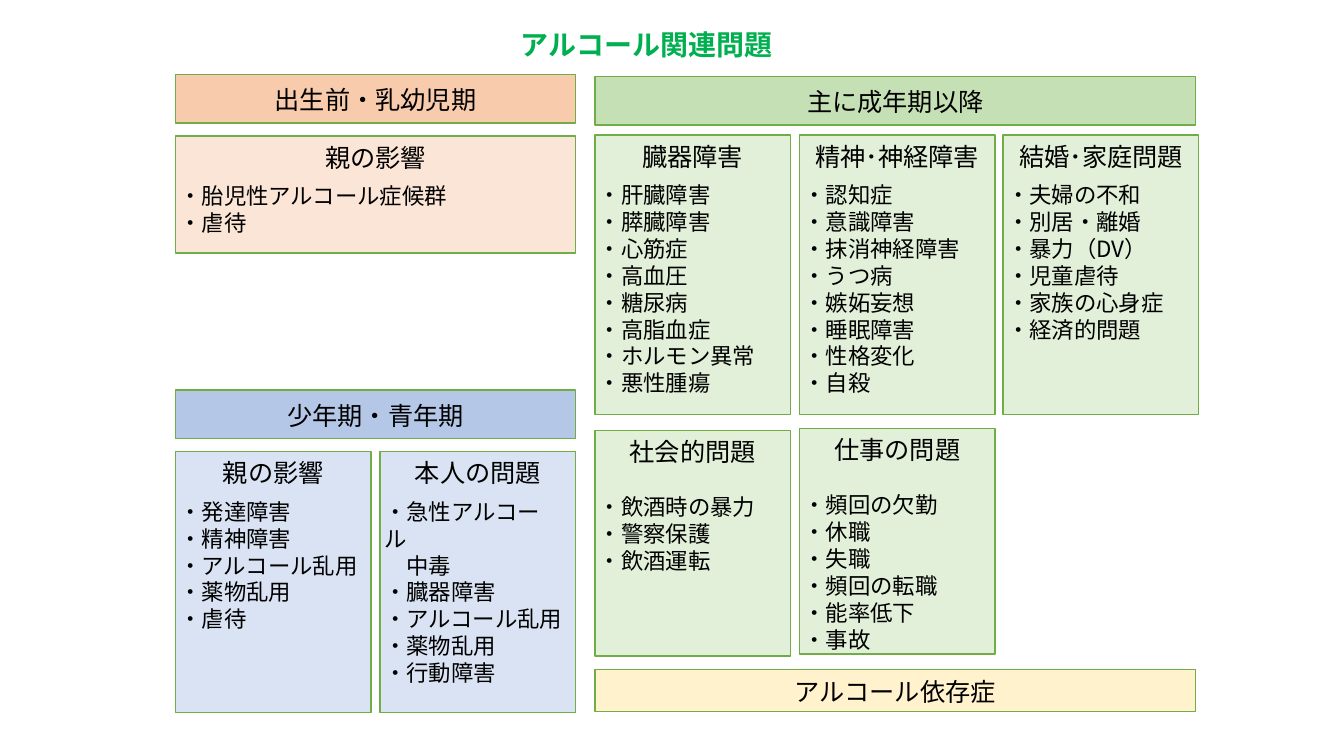
from lxml.etree import SubElement
from pptx import Presentation
from pptx.dml.color import RGBColor
from pptx.enum.lang import MSO_LANGUAGE_ID as Language
from pptx.enum.shapes import MSO_SHAPE as Shape
from pptx.enum.text import MSO_ANCHOR as Anchor, MSO_AUTO_SIZE as AutoSize, PP_ALIGN as Align
from pptx.oxml.ns import qn
from pptx.util import Inches, Pt

COLORS = {
    "text": "000000", "title": "00B050", "border": "70AD47",
    "infancy": "F8CBAD", "infancy_light": "FBE5D6",
    "youth": "B4C7E7", "youth_light": "DAE3F3",
    "adult": "C5E0B4", "adult_light": "E2F0D9",
    "dependence": "FFF2CC",
}
FONT = "Noto Sans CJK JP"
TITLE_SIZE, HEADING_SIZE, ITEM_SIZE = 20, 18, 16
LINE_RATIO = 1.2
NARROW_GAP, WIDE_GAP = 7.2, 19.2

LEFT, YOUTH_SECOND = 1.74, 3.77
ADULT_COLUMNS = (5.9, 7.93, 9.95)
LEFT_WIDTH, RIGHT_WIDTH = 3.97, 5.96
YOUTH_WIDTH, ADULT_WIDTH = 1.94, 1.94
BANNER_HEIGHT = 0.48

BANNERS = [
    ("出生前・乳幼児期", LEFT, 0.74, LEFT_WIDTH, BANNER_HEIGHT, "infancy"),
    ("主に成年期以降", ADULT_COLUMNS[0], 0.76, RIGHT_WIDTH, BANNER_HEIGHT, "adult"),
    ("少年期・青年期", LEFT, 3.87, LEFT_WIDTH, BANNER_HEIGHT, "youth"),
    ("アルコール依存症", ADULT_COLUMNS[0], 6.64, RIGHT_WIDTH, 0.42, "dependence"),
]
LEFT_CARDS = [
    ("親の影響", ["胎児性アルコール症候群", "虐待"],
     LEFT, 1.35, LEFT_WIDTH, 1.16, "infancy_light"),
    ("親の影響", ["発達障害", "精神障害", "アルコール乱用", "薬物乱用", "虐待"],
     LEFT, 4.48, YOUTH_WIDTH, 2.59, "youth_light"),
    ("本人の問題", ["急性アルコール　", "　中毒", "臓器障害", "アルコール乱用",
                "薬物乱用", "行動障害"],
     YOUTH_SECOND, 4.48, YOUTH_WIDTH, 2.59, "youth_light"),
]
HEALTH_CARDS = [
    ("臓器障害", ["肝臓障害", "膵臓障害", "心筋症", "高血圧", "糖尿病", "高脂血症",
              "ホルモン異常", "悪性腫瘍"]),
    ("精神･神経障害", ["認知症", "意識障害", "抹消神経障害", "うつ病", "嫉妬妄想",
                 "睡眠障害", "性格変化", "自殺"]),
    ("結婚･家庭問題", ["夫婦の不和", "別居・離婚", "暴力（DV）", "児童虐待",
                 "家族の心身症", "経済的問題"]),
]
SOCIAL_CARDS = [
    ("社会的問題", ["飲酒時の暴力", "警察保護", "飲酒運転"], 4.27),
    ("仕事の問題", ["頻回の欠勤", "休職", "失職", "頻回の転職", "能率低下", "事故"], 4.25),
]


def write(para, text, size=ITEM_SIZE, color="text", bold=False, align=Align.LEFT, after=0):
    """Fill a paragraph with one formatted span."""
    para.alignment = align
    para.line_spacing = Pt(size * LINE_RATIO)
    para.space_before = Pt(0)
    para.space_after = Pt(after)
    span = para.add_run()
    span.text = text
    font = span.font
    font.size, font.bold, font.name = Pt(size), bold, FONT
    font.language_id = Language.JAPANESE
    font.color.rgb = RGBColor.from_string(COLORS[color])
    SubElement(span._r.get_or_add_rPr(), qn("a:ea"), typeface=FONT)


class Page:
    def __init__(self, deck):
        self.slide = deck.slides.add_slide(deck.slide_layouts[5])

    def title(self, text, left, top, width, height):
        box = self.slide.shapes.title
        box.left, box.top, box.width, box.height = map(Inches, (left, top, width, height))
        frame = box.text_frame
        frame.word_wrap = False
        frame.auto_size = AutoSize.NONE
        frame.vertical_anchor = Anchor.TOP
        write(frame.paragraphs[0], text, size=TITLE_SIZE, color="title", bold=True,
              align=Align.CENTER)

    def panel(self, left, top, width, height, fill, anchor):
        box = self.slide.shapes.add_shape(
            Shape.RECTANGLE, *map(Inches, (left, top, width, height)))
        box.shadow.inherit = False
        box.fill.solid()
        box.fill.fore_color.rgb = RGBColor.from_string(COLORS[fill])
        box.line.color.rgb = RGBColor.from_string(COLORS["border"])
        box.line.width = Pt(1)
        frame = box.text_frame
        frame.word_wrap = True
        frame.vertical_anchor = anchor
        frame.margin_left = frame.margin_right = frame.margin_bottom = Inches(0.04)
        frame.margin_top = Inches(0.06)
        return frame

    def banner(self, text, left, top, width, height, fill):
        frame = self.panel(left, top, width, height, fill, Anchor.MIDDLE)
        write(frame.paragraphs[0], text, size=HEADING_SIZE, align=Align.CENTER)

    def card(self, heading, items, left, top, width, height, fill, gap=NARROW_GAP):
        frame = self.panel(left, top, width, height, fill, Anchor.TOP)
        write(frame.paragraphs[0], heading, size=HEADING_SIZE, align=Align.CENTER, after=gap)
        for item in items:
            mark = "" if item.startswith("　") else "・"
            write(frame.add_paragraph(), mark + item)


def main():
    deck = Presentation()
    deck.slide_width, deck.slide_height = Inches(13.33), Inches(7.5)
    page = Page(deck)
    page.title("アルコール関連問題", 5.05, 0.22, 2.73, 0.44)
    for banner in BANNERS:
        page.banner(*banner)
    for card in LEFT_CARDS:
        page.card(*card)
    for left, (heading, items) in zip(ADULT_COLUMNS, HEALTH_CARDS):
        page.card(heading, items, left, 1.34, ADULT_WIDTH, 2.77, "adult_light")
    for left, (heading, items, top) in zip(ADULT_COLUMNS, SOCIAL_CARDS):
        page.card(heading, items, left, top, ADULT_WIDTH, 2.24, "adult_light", gap=WIDE_GAP)
    deck.save("out.pptx")


if __name__ == "__main__":
    main()
